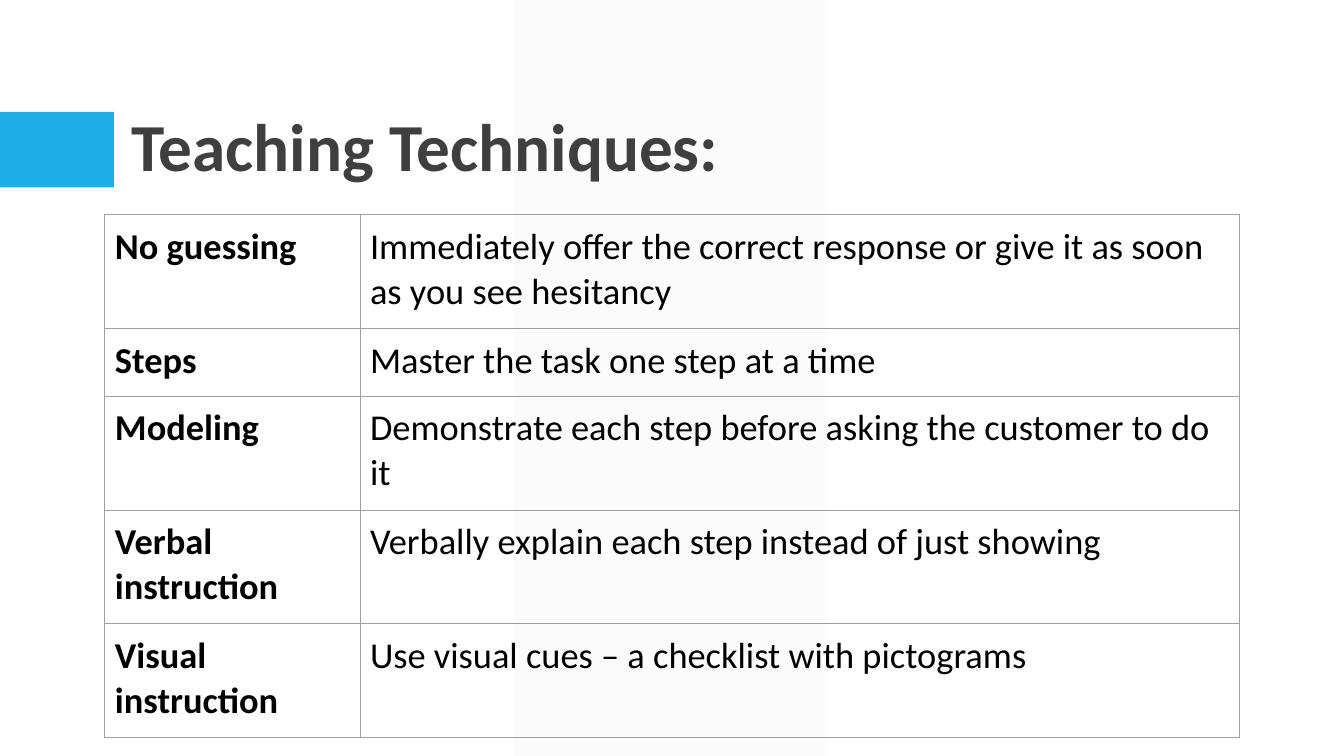
"""Build the Teaching Techniques slide."""
import pptx
import pptx.dml.color
import pptx.enum.shapes
import pptx.enum.text
import pptx.oxml
import pptx.oxml.ns
import pptx.util
from pptx.util import Inches

TITLE = "Teaching Techniques:"
TECHNIQUES = [
    ("No guessing", "Immediately offer the correct response or give it as soon as you see hesitancy", 1.13),
    ("Steps", "Master the task one step at a time", 0.67),
    ("Modeling", "Demonstrate each step before asking the customer to do it", 1.13),
    ("Verbal instruction", "Verbally explain each step instead of just showing", 1.13),
    ("Visual instruction", "Use visual cues – a checklist with pictograms", 1.13),
]
COLUMNS = (2.53, 8.72)
PALE, BLUE, DARK, BLACK, GREY = "F2F2F2", "1CADE4", "3F3F3F", "000000", "9E9E9E"
SHAPE = pptx.enum.shapes.MSO_SHAPE
ANCHOR = pptx.enum.text.MSO_ANCHOR


def rgb(color):
    return pptx.dml.color.RGBColor.from_string(color)


def set_font(p, size, color, bold):
    p.font.name = "Calibri"
    p.font.size = pptx.util.Pt(size)
    p.font.bold = bold
    p.font.color.rgb = rgb(color)


def add_block(s, kind, box, color):
    sp = s.shapes.add_shape(kind, *map(Inches, box))
    sp.shadow.inherit = False
    sp.fill.solid()
    sp.fill.fore_color.rgb = rgb(color)
    sp.line.fill.background()
    return sp


def add_borders(cell):
    tc_pr = cell._tc.get_or_add_tcPr()
    for i, side in enumerate(("lnL", "lnR", "lnT", "lnB")):
        tc_pr.insert(i, pptx.oxml.parse_xml(
            f'<a:{side} {pptx.oxml.ns.nsdecls("a")} w="{pptx.util.Pt(0.75)}"><a:solidFill>'
            f'<a:srgbClr val="{GREY}"/></a:solidFill></a:{side}>'))


def add_background(s):
    band = add_block(s, SHAPE.PARALLELOGRAM, (5.1, 0, 3.12, 7.5), PALE)
    band.adjustments[0] = 0
    color = band.fill._xPr.find(".//" + pptx.oxml.ns.qn("a:srgbClr"))
    color.append(pptx.oxml.parse_xml(f'<a:alpha {pptx.oxml.ns.nsdecls("a")} val="30000"/>'))
    add_block(s, SHAPE.RECTANGLE, (0, 1.11, 1.13, 0.75), BLUE)


def add_title(s):
    title = s.shapes.title
    s.shapes.element.append(title.element)
    title.left, title.top, title.width, title.height = map(Inches, (1.2, 0.31, 11, 1.59))
    tf = title.text_frame
    tf.text = TITLE
    tf.auto_size = pptx.enum.text.MSO_AUTO_SIZE.NONE
    tf.vertical_anchor = ANCHOR.BOTTOM
    p = tf.paragraphs[0]
    p.alignment = pptx.enum.text.PP_ALIGN.LEFT
    p.line_spacing = 0.9
    set_font(p, 48, DARK, True)


def add_techniques(s):
    height = sum(row[2] for row in TECHNIQUES)
    table = s.shapes.add_table(len(TECHNIQUES), len(COLUMNS), Inches(1.04), Inches(2.13),
                               Inches(sum(COLUMNS)), Inches(height)).table
    table.first_row = table.horz_banding = False
    for column, width in zip(table.columns, COLUMNS):
        column.width = Inches(width)
    for row, (*texts, row_height) in zip(table.rows, TECHNIQUES):
        row.height = Inches(row_height)
        for i, (cell, text) in enumerate(zip(row.cells, texts)):
            cell.text = text
            cell.fill.background()
            cell.vertical_anchor = ANCHOR.TOP
            cell.margin_left = cell.margin_right = Inches(0.1)
            cell.margin_top = cell.margin_bottom = Inches(0.1)
            add_borders(cell)
            set_font(cell.text_frame.paragraphs[0], 26, BLACK, i == 0)


def main():
    prs = pptx.Presentation()
    prs.slide_width, prs.slide_height = Inches(13.33), Inches(7.5)
    s = prs.slides.add_slide(prs.slide_layouts[5])
    add_background(s)
    add_title(s)
    add_techniques(s)
    prs.save("out.pptx")


if __name__ == "__main__":
    main()
